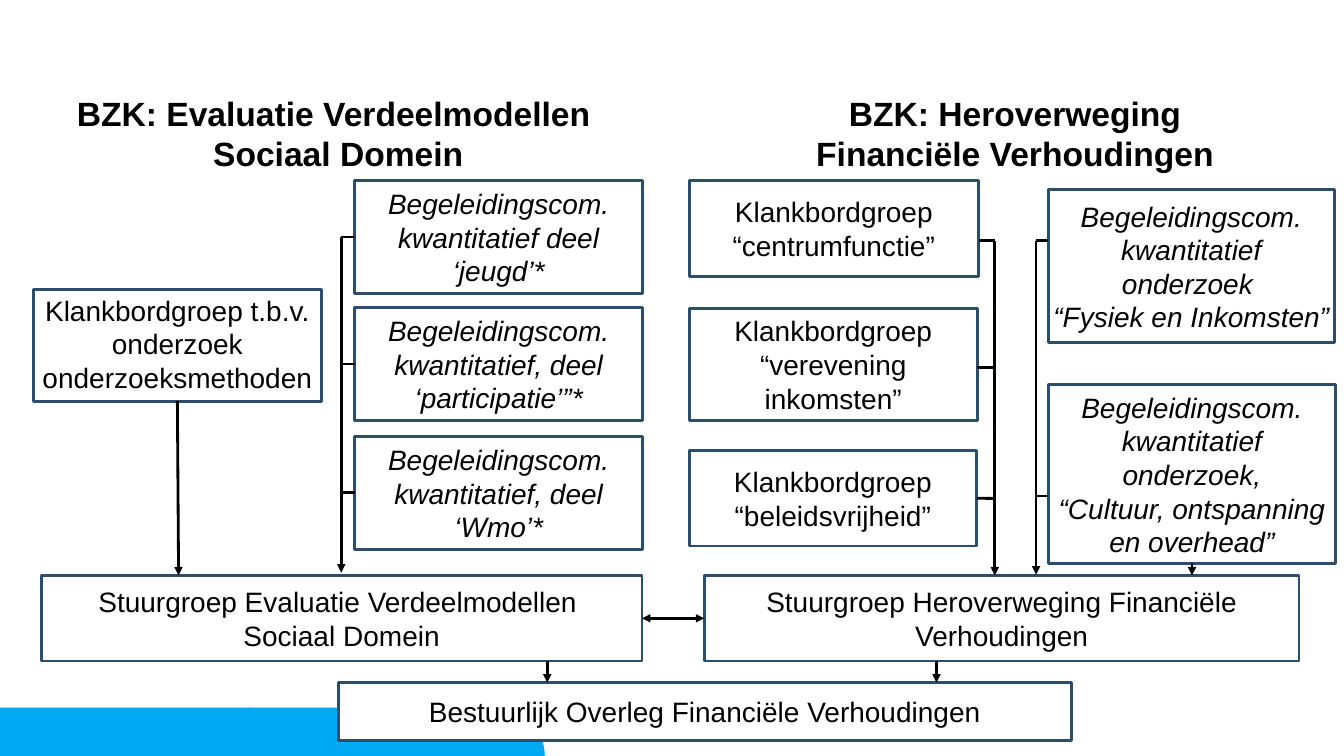
"""Build the slide on the governance of two BZK studies into municipal finance."""
import math

import lxml.etree
import pptx
import pptx.dml.color
import pptx.enum.shapes
import pptx.enum.text
import pptx.oxml.ns
import pptx.util

Cm, Pt = pptx.util.Cm, pptx.util.Pt
ANCHOR = pptx.enum.text.MSO_ANCHOR
TOP, LEFT, BOTTOM, RIGHT = range(4)

COLOURS = {"text": "000000", "fill": "FFFFFF", "border": "2D4E6B", "tab": "00A9F3"}
PLAIN = {"name": "Arial", "size": Pt(20), "bold": False, "italic": False}
ITALIC = {**PLAIN, "italic": True}
HEADING = {**PLAIN, "size": Pt(24), "bold": True}

HEADINGS = [
    ("BZK: Evaluatie Verdeelmodellen \nSociaal Domein", (0.84, 2.62, 15.37, 1.45)),
    ("BZK: Heroverweging\nFinanciële Verhoudingen", (17.45, 2.62, 16.26, 1.45)),
]
BOXES = {
    "centrum": ("Klankbordgroep “centrumfunctie”", (17.37, 4.55, 7.29, 2.41), PLAIN),
    "verevening": ("Klankbordgroep “verevening inkomsten”", (17.37, 7.77, 7.26, 2.82), PLAIN),
    "beleid": ("Klankbordgroep “beleidsvrijheid”", (17.37, 11.35, 7.24, 2.41), PLAIN),
    "overleg": ("Bestuurlijk Overleg Financiële Verhoudingen", (8.53, 17.2, 18.47, 1.47), PLAIN),
    "heroverweging": ("Stuurgroep Heroverweging Financiële Verhoudingen",
                      (17.75, 14.5, 14.99, 2.16), PLAIN),
    "evaluatie": ("Stuurgroep Evaluatie Verdeelmodellen \nSociaal Domein",
                  (1.04, 14.5, 15.14, 2.16), PLAIN),
    "methoden": ("Klankbordgroep t.b.v. onderzoek onderzoeksmethoden",
                 (0.84, 7.29, 7.26, 2.82), PLAIN),
    "fysiek": ("Begeleidingscom.\nkwantitatief onderzoek \n“Fysiek en Inkomsten”",
               (26.42, 4.78, 7.21, 3.86), ITALIC),
    "cultuur": ("Begeleidingscom.\nkwantitatief onderzoek,\n“Cultuur, ontspanning en overhead”",
                (26.42, 9.7, 7.24, 4.5), ITALIC),
    "wmo": ("Begeleidingscom. kwantitatief, deel ‘Wmo’*", (8.94, 11, 7.26, 2.84), ITALIC),
    "jeugd": ("Begeleidingscom. kwantitatief deel ‘jeugd’*", (8.94, 4.55, 7.26, 2.84), ITALIC),
    "participatie": ("Begeleidingscom. kwantitatief, deel ‘participatie’”*",
                     (8.94, 7.75, 7.26, 2.84), ITALIC),
}
TOP_ANCHORED = {"methoden"}

EVALUATION_X, CENTRE_X, COMMITTEE_X = 8.6, 25.07, 26.11
ARROW, BOTH, NONE = ("tailEnd",), ("headEnd", "tailEnd"), ()
LINKS = [
    (("cultuur", BOTTOM), (30.04, 14.5), ARROW),
    ((23.6, 16.66), (23.6, 17.2), ARROW),
    ((13.79, 16.66), (13.79, 17.2), ARROW),
    (("evaluatie", RIGHT), ("heroverweging", LEFT), BOTH),
    ((EVALUATION_X, 5.97), (EVALUATION_X, 14.43), ARROW),
    (("methoden", BOTTOM), (4.5, 14.5), ARROW),
    (("jeugd", LEFT), (EVALUATION_X, 5.97), NONE),
    (("participatie", LEFT), (EVALUATION_X, 9.17), NONE),
    (("wmo", LEFT), (EVALUATION_X, 12.42), NONE),
    ((COMMITTEE_X, 6.07), (COMMITTEE_X, 14.48), ARROW),
    ((26.42, 6.07), (COMMITTEE_X, 6.07), NONE),
    ((26.42, 12.5), (COMMITTEE_X, 12.5), NONE),
    ((CENTRE_X, 6.07), (CENTRE_X, 14.5), ARROW),
    ((24.66, 6.07), (CENTRE_X, 6.07), NONE),
    ((24.63, 9.27), (CENTRE_X, 9.27), NONE),
    (("beleid", RIGHT), (CENTRE_X, 12.56), NONE),
]
TAB_LEFTS, TAB_WIDTH, TAB_TOP, TAB_RADIUS = (0, 6.25), 7.48, 17.83, 1.22


def colour(name):
    return pptx.dml.color.RGBColor.from_string(COLOURS[name])


def paint(shape, fill):
    shape.shadow.inherit = False
    shape.fill.solid()
    shape.fill.fore_color.rgb = colour(fill)


def write(shape, text, style, anchor=ANCHOR.MIDDLE):
    frame = shape.text_frame
    layout = {"word_wrap": True, "auto_size": pptx.enum.text.MSO_AUTO_SIZE.NONE,
              "vertical_anchor": anchor}
    layout.update({f"margin_{side}": Cm(0.1) for side in ("left", "top", "right", "bottom")})
    for key, value in layout.items():
        setattr(frame, key, value)
    para = frame.paragraphs[0]
    para.text = text
    para.alignment = pptx.enum.text.PP_ALIGN.CENTER
    for span in para.runs:
        for key, value in style.items():
            setattr(span.font, key, value)
        span.font.color.rgb = colour("text")


def add_tab(page, left):
    centre = left + TAB_WIDTH - TAB_RADIUS
    bottom = TAB_TOP + TAB_RADIUS
    angles = [math.radians(step * 6) for step in range(16)]
    arc = [(Cm(centre + TAB_RADIUS * math.sin(angle)), Cm(bottom - TAB_RADIUS * math.cos(angle)))
           for angle in angles]
    builder = page.shapes.build_freeform(Cm(left), Cm(bottom))
    builder.add_line_segments([(Cm(left), Cm(TAB_TOP)), *arc], close=True)
    tab = builder.convert_to_shape()
    paint(tab, "tab")
    tab.line.fill.background()


def add_box(page, text, place, style, anchor):
    box = page.shapes.add_shape(pptx.enum.shapes.MSO_SHAPE.RECTANGLE, *map(Cm, place))
    paint(box, "fill")
    box.line.color.rgb = colour("border")
    box.line.width = Pt(2)
    write(box, text, style, anchor)
    return box


def add_link(page, boxes, start, end, arrowheads):
    points = [(0, 0) if point[0] in boxes else point for point in (start, end)]
    link = page.shapes.add_connector(pptx.enum.shapes.MSO_CONNECTOR.STRAIGHT,
                                     *[Cm(value) for point in points for value in point])
    for point, connect in ((start, link.begin_connect), (end, link.end_connect)):
        if point[0] in boxes:
            connect(boxes[point[0]], point[1])
    link.line.color.rgb = colour("text")
    link.line.width = Pt(2)
    qn = pptx.oxml.ns.qn
    properties = link.element.spPr
    for arrowhead in arrowheads:
        lxml.etree.SubElement(properties.find(qn("a:ln")), qn(f"a:{arrowhead}"), type="triangle")
    lxml.etree.SubElement(properties, qn("a:effectLst"))


def main():
    deck = pptx.Presentation()
    deck.slide_width, deck.slide_height = Cm(33.87), Cm(19.05)
    page = deck.slides.add_slide(deck.slide_layouts[5])
    for left in TAB_LEFTS:
        add_tab(page, left)
    boxes = {}
    for name, (text, place, style) in BOXES.items():
        anchor = ANCHOR.TOP if name in TOP_ANCHORED else ANCHOR.MIDDLE
        boxes[name] = add_box(page, text, place, style, anchor)
    headings = [page.shapes.title, page.shapes.add_textbox(0, 0, 0, 0)]
    for heading, (text, place) in zip(headings, HEADINGS):
        for key, value in zip(("left", "top", "width", "height"), place):
            setattr(heading, key, Cm(value))
        write(heading, text, HEADING)
    for start, end, arrowheads in LINKS:
        add_link(page, boxes, start, end, arrowheads)
    deck.save("out.pptx")


if __name__ == "__main__":
    main()
